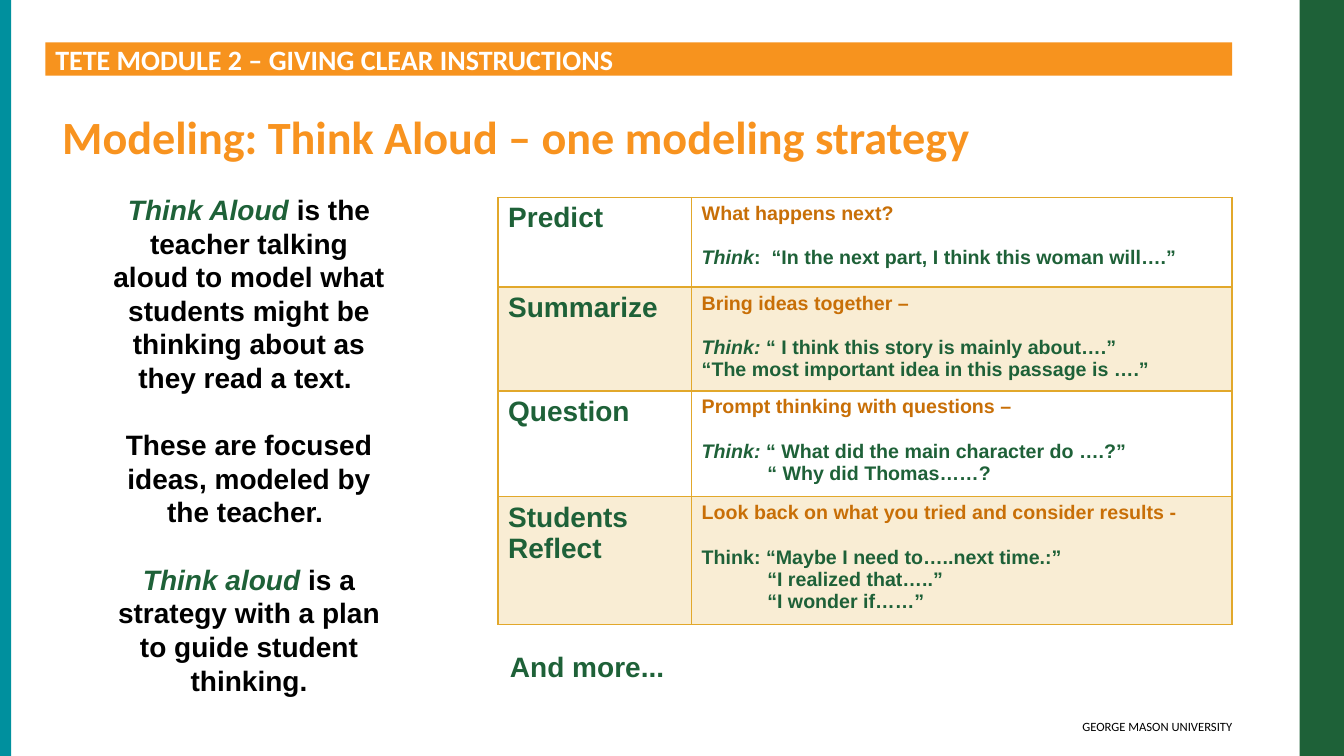
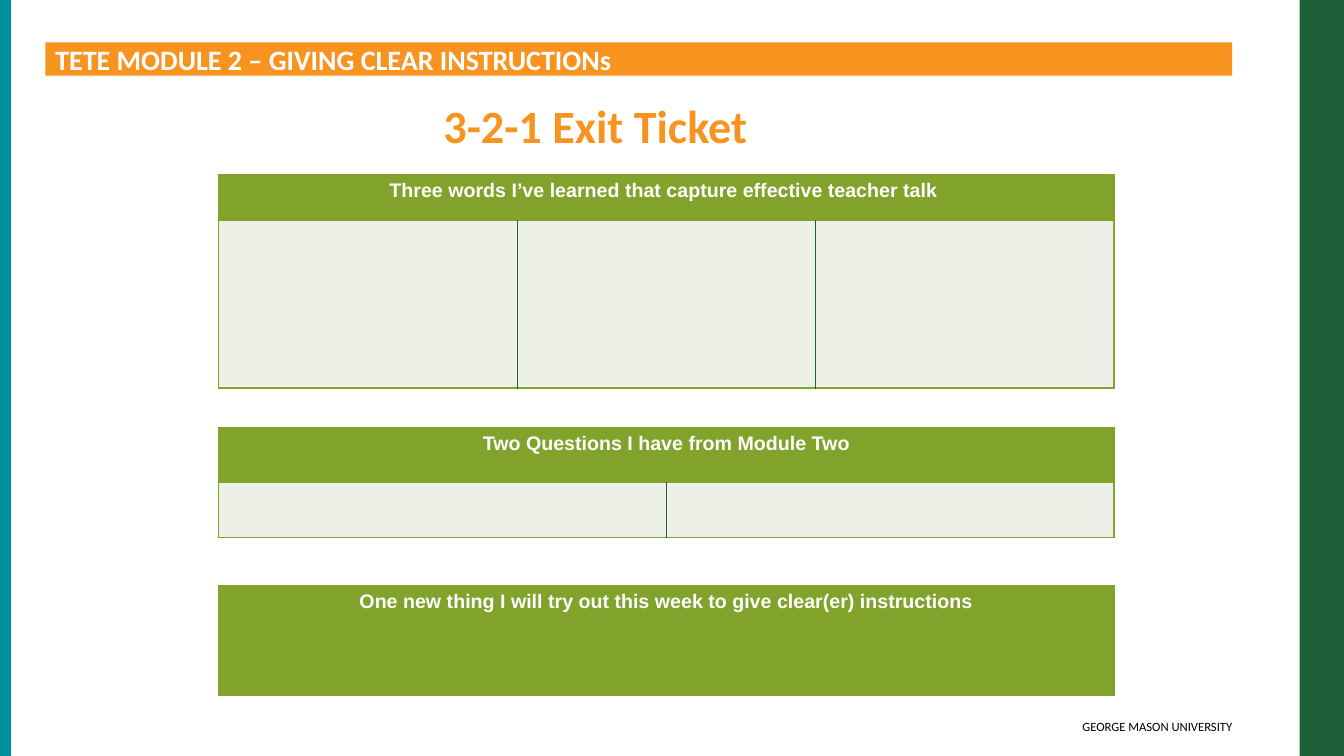
from pptx import Presentation
from pptx.dml.color import RGBColor
from pptx.enum.shapes import MSO_SHAPE
from pptx.enum.text import MSO_ANCHOR, PP_ALIGN
from pptx.oxml.ns import qn
from pptx.util import Pt
from lxml.etree import SubElement

PX = 9144
SLIDE_W, SLIDE_H = 1333, 750


class Theme:
    forest, teal, band, title = "1E6138", "00909E", "F7931E", "F8931F"
    gold, rust, olive, pale = "E2A82B", "C86F07", "81A32B", "ECF0E7"
    white, black = "FFFFFF", "000000"
    head_font, body_font = "Calibri", "Arial"
    big, small, title_size, footer_size = 20, 14, 33, 9

    styles = {
        "band": dict(name=head_font, size=big, color=white, bold=True),
        "title": dict(name=head_font, size=title_size, color=title, bold=True),
        "footer": dict(name=head_font, size=footer_size, color=black, bold=False),
        "body": dict(name=body_font, size=big, color=black, bold=True),
        "term": dict(name=body_font, size=big, color=forest, bold=True, italic=True),
        "label": dict(name=body_font, size=big, color=forest, bold=True),
        "prompt": dict(name=body_font, size=small, color=rust, bold=True),
        "quote": dict(name=body_font, size=small, color=forest, bold=True),
        "think": dict(name=body_font, size=small, color=forest, bold=True, italic=True),
        "header": dict(name=body_font, size=small, color=white, bold=True),
    }


def rgb(value):
    return RGBColor.from_string(value)


def emu(*lengths):
    return [n * PX for n in lengths]


def para(*runs, **fmt):
    return runs, fmt


def style_font(font, style):
    for key, value in Theme.styles[style].items():
        if key == "color":
            font.color.rgb = rgb(value)
        else:
            setattr(font, key, Pt(value) if key == "size" else value)


def write(tf, paras, align=PP_ALIGN.LEFT):
    for i, (runs, fmt) in enumerate(paras):
        p = tf.paragraphs[0] if i == 0 else tf.add_paragraph()
        settings = {"alignment": align, **fmt}
        indent = settings.pop("indent", 0)
        if indent:
            p._p.get_or_add_pPr().set("marL", str(indent * PX))
        for key, value in settings.items():
            setattr(p, key, value)
        for text, style in runs:
            r = p.add_run()
            r.text = text
            style_font(r.font, style)


def set_frame(tf, insets, anchor=MSO_ANCHOR.TOP):
    sides = ("margin_left", "margin_top", "margin_right", "margin_bottom")
    settings = dict(zip(sides, emu(*insets)), word_wrap=True, vertical_anchor=anchor)
    for key, value in settings.items():
        setattr(tf, key, value)


def add_text(s, box, paras, align=PP_ALIGN.LEFT, insets=(10, 5, 10, 5)):
    tf = s.shapes.add_textbox(*emu(*box)).text_frame
    set_frame(tf, insets)
    write(tf, paras, align)


def add_rect(s, box, color):
    sp = s.shapes.add_shape(MSO_SHAPE.RECTANGLE, *emu(*box))
    sp.shadow.inherit = False
    sp.fill.solid()
    sp.fill.fore_color.rgb = rgb(color)
    sp.line.fill.background()
    return sp


def add_title(s, box, text, align=PP_ALIGN.LEFT):
    add_text(s, box, [para((text, "title"))], align, (10, 10, 10, 10))


def base_slide(prs, band_text):
    s = prs.slides.add_slide(prs.slide_layouts[6])
    add_rect(s, (SLIDE_W - 44, 0, 44, SLIDE_H), Theme.forest)
    add_rect(s, (0, 0, 11, SLIDE_H), Theme.teal)
    add_text(s, (678, 708, 544, 33), [para(("GEORGE MASON UNIVERSITY", "footer"))],
             PP_ALIGN.RIGHT, (10, 5, 0, 5))
    band = add_rect(s, (45, 42, 1177, 33), Theme.band)
    set_frame(band.text_frame, (10, 0, 10, 0), MSO_ANCHOR.MIDDLE)
    write(band.text_frame, [para((band_text, "band"))])
    return s


def set_borders(cell, edges):
    tcPr = cell._tc.get_or_add_tcPr()
    for side in "LRTB":
        color, width = edges[side]
        ln = SubElement(tcPr, qn("a:ln" + side), w=str(Pt(width)))
        fill = SubElement(ln, qn("a:solidFill"))
        SubElement(fill, qn("a:srgbClr"), val=color)


def set_fill(cell, color, alpha=None):
    if color is None:
        cell.fill.background()
        return
    cell.fill.solid()
    cell.fill.fore_color.rgb = rgb(color)
    if alpha:
        clr = cell._tc.tcPr.find(qn("a:solidFill")).find(qn("a:srgbClr"))
        SubElement(clr, qn("a:alpha"), val=str(alpha * 1000))


def add_grid(s, left, top, cols, rows):
    frame = s.shapes.add_table(len(rows), len(cols),
                               *emu(left, top, sum(cols), sum(rows)))
    table = frame.table
    table.first_row = table.horz_banding = False
    for col, width in zip(table.columns, cols):
        col.width = width * PX
    for row, height in zip(table.rows, rows):
        row.height = height * PX
    return table


def strategy_table(s, box, rows):
    left, top, width = box
    label_w = 192
    table = add_grid(s, left, top, (label_w, width - label_w), [h for h, *_ in rows])
    thin, thick = (Theme.gold, 1), (Theme.gold, 2)
    for i, (_, label, paras) in enumerate(rows):
        edges = dict(L=thin, R=thin, T=thick if i == 1 else thin,
                     B=thick if i == 0 else thin)
        for j, content in enumerate(([para((label, "label"))], paras)):
            cell = table.cell(i, j)
            set_borders(cell, edges)
            set_fill(cell, Theme.gold if i % 2 else None, 20)
            write(cell.text_frame, content)


def ticket_table(s, box, text, count, heights):
    left, top, width = box
    table = add_grid(s, left, top, [width // count] * count, heights)
    outer, inner = (Theme.olive, 1), (Theme.forest, 1)
    for i in range(len(heights)):
        for j in range(count):
            cell = table.cell(i, j)
            set_borders(cell, dict(
                L=inner if i and j else outer,
                R=inner if i and j < count - 1 else outer,
                T=outer, B=outer))
            set_fill(cell, Theme.pale if i else Theme.olive)
    header = table.cell(0, 0)
    if count > 1:
        header.merge(table.cell(0, count - 1))
    write(header.text_frame, [para((text, "header"))], PP_ALIGN.CENTER)


def strategy_slide(prs):
    s = base_slide(prs, "TETE MODULE 2 – GIVING CLEAR INSTRUCTIONS")
    add_title(s, (44, 97, 936, 76), "Modeling: Think Aloud – one modeling strategy",
              PP_ALIGN.CENTER)
    gap = dict(space_before=Pt(24))
    add_text(s, (100, 186, 294, 515), [
        para(("Think Aloud ", "term"),
             ("is the teacher talking aloud to model what students might be "
              "thinking about as they read a text. ", "body")),
        para(("These are focused ideas, modeled by the teacher. ", "body"), **gap),
        para(("Think aloud", "term"),
             (" is a strategy with a plan to guide student thinking.", "body"), **gap),
    ], PP_ALIGN.CENTER)
    after = dict(space_before=Pt(16))
    strategy_table(s, (494, 196, 728), [
        (89, "Predict", [
            para(("What happens next?", "prompt")),
            para(("Think", "think"),
                 (":  “In the next part, I think this woman will….”", "quote"), **after)]),
        (103, "Summarize", [
            para(("Bring ideas together –", "prompt")),
            para(("Think:", "think"),
                 (" “ I think this story is mainly about….”", "quote"), **after),
            para(("“The most important idea in this passage is ….”", "quote"))]),
        (105, "Question", [
            para(("Prompt thinking with questions –", "prompt")),
            para(("Think:", "think"),
                 (" “ What did the main character do ….?”", "quote"), **after),
            para(("“ Why did Thomas……?", "quote"), indent=65)]),
        (127, "Students Reflect", [
            para(("Look back on what you tried and consider results -", "prompt")),
            para(("Think: “Maybe I need to…..next time.:”", "quote"), **after),
            para(("“I realized that…..”", "quote"), indent=65),
            para(("“I wonder if……”", "quote"), indent=65)]),
    ])
    add_text(s, (496, 639, 300, 44), [para(("And more...", "label"))])


def ticket_slide(prs):
    s = base_slide(prs, "TETE MODULE 2 – GIVING CLEAR INSTRUCTIONs")
    add_title(s, (430, 87, 444, 76), "3-2-1 Exit Ticket")
    for top, text, count, heights in (
        (173, "Three words I’ve learned that capture effective teacher talk ", 3, (46, 166)),
        (424, "Two Questions I have from Module Two", 2, (55, 54)),
        (581, "One new thing I will try out this week to give clear(er) instructions",
         1, (109,)),
    ):
        ticket_table(s, (217, top, 888), text, count, heights)


def main():
    prs = Presentation()
    prs.slide_width, prs.slide_height = emu(SLIDE_W, SLIDE_H)
    strategy_slide(prs)
    ticket_slide(prs)
    prs.save("out.pptx")


if __name__ == "__main__":
    main()
